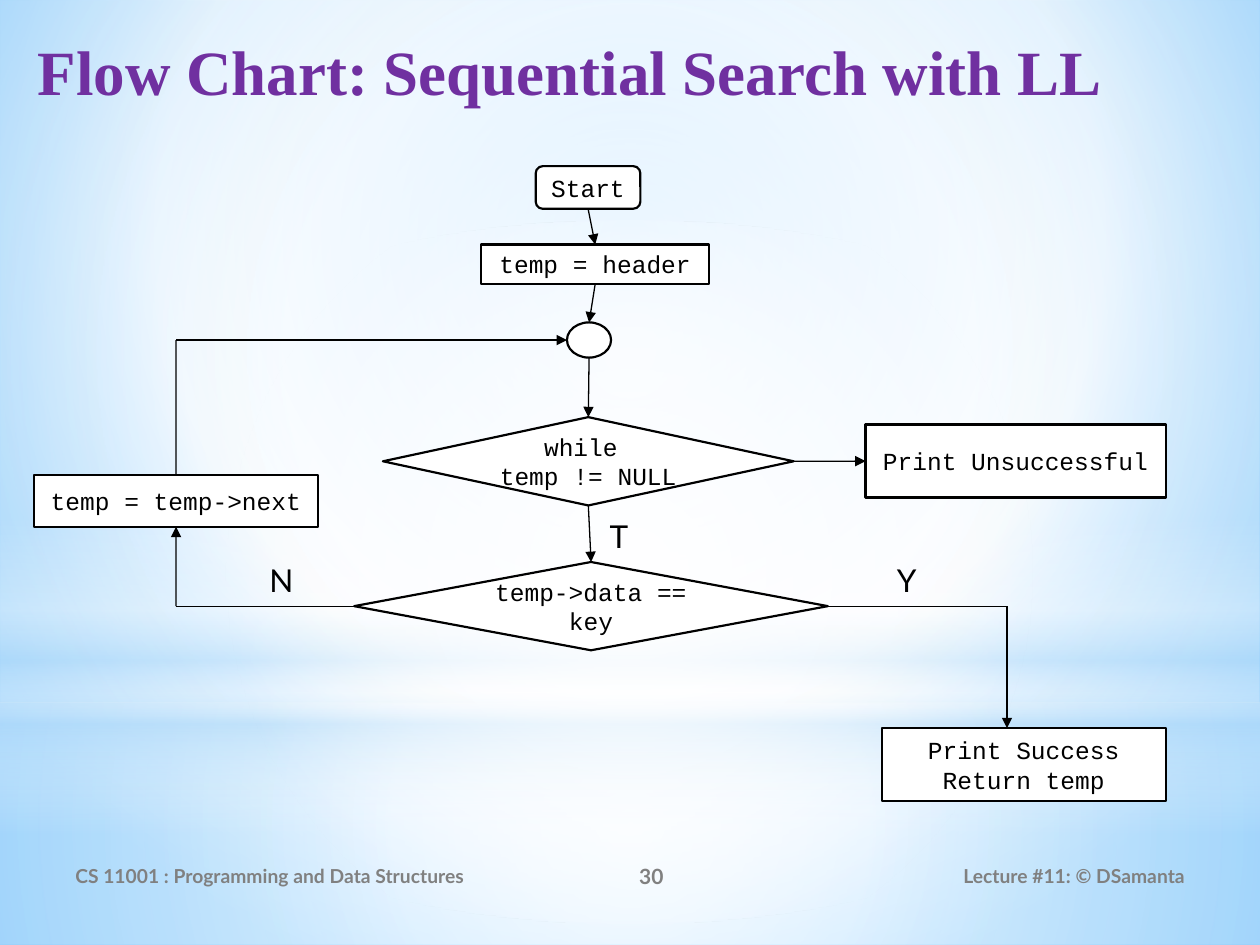
from dataclasses import dataclass
from typing import NamedTuple, Optional, Union

import lxml.etree
import pptx
import pptx.dml.color
import pptx.dml.fill
import pptx.enum.shapes
import pptx.enum.text
import pptx.oxml
import pptx.oxml.ns
import pptx.shapes.autoshape
import pptx.slide
import pptx.util

Cm = pptx.util.Cm
Pt = pptx.util.Pt
SHAPE = pptx.enum.shapes.MSO_SHAPE
ALIGN = pptx.enum.text.PP_ALIGN
ANCHOR = pptx.enum.text.MSO_ANCHOR
qn = pptx.oxml.ns.qn
TOP, LEFT, BOTTOM, RIGHT = range(4)


class Font(NamedTuple):
    name: str
    size: float
    color: str
    bold: bool = False


class Theme:
    ink = "000000"
    paper = "FFFFFF"
    sky = "B4DCFA"
    title = Font("Times New Roman", 36, "7030A0", True)
    footer = Font("Lato", 11, "808080", True)
    number = Font("Lato", 12, "808080", True)
    code = Font("Courier New", 14, ink)
    label = Font("Lato", 18, ink)
    outline = 1.25
    arrow = 0.75


class Box(NamedTuple):
    x: float
    y: float
    w: float
    h: float

    def lengths(self) -> list[pptx.util.Length]:
        return [Cm(v) for v in self]

    def side(self, side: int) -> "Point":
        dx, dy = [(0.5, 0), (0, 0.5), (0.5, 1), (1, 0.5)][side]
        return Point(self.x + dx * self.w, self.y + dy * self.h)


class Point(NamedTuple):
    x: float
    y: float


class Joint(NamedTuple):
    step: str
    side: int


class Stop(NamedTuple):
    pos: int
    color: str
    alpha: int = 100


@dataclass
class Gradient:
    stops: list[Stop]
    focus: Optional[tuple[int, int, int, int]] = (50, 50, 50, 50)


@dataclass
class Glow:
    kind: int
    box: Box
    gradient: Gradient


@dataclass
class Text:
    lines: list[str]
    box: Box
    font: Font
    align: int = ALIGN.LEFT
    anchor: int = ANCHOR.TOP


@dataclass
class Step:
    kind: int
    box: Box
    lines: list[str]


@dataclass
class Link:
    start: Union[Joint, Point]
    end: Union[Joint, Point]
    arrow: bool = True


BACKGROUND = Gradient([Stop(0, "9ED5FF"), Stop(60, Theme.paper), Stop(100, "5BB9FF")], (20, 10, 20, 60))
GLOWS = [
    Glow(SHAPE.RECTANGLE, Box(0, 14.17, 25.4, 4.88), Gradient(
        [Stop(0, Theme.paper, 91), Stop(37, Theme.paper, 76), Stop(100, Theme.sky, 79)])),
    Glow(SHAPE.RECTANGLE, Box(0, 0, 25.4, 14.17), Gradient(
        [Stop(0, Theme.paper, 89), Stop(48, Theme.paper, 62), Stop(100, Theme.sky, 79)])),
    Glow(SHAPE.RECTANGLE, Box(0, 10.46, 25.4, 6.35), Gradient(
        [Stop(0, Theme.paper, 0), Stop(29, Theme.paper, 30), Stop(45, Theme.sky, 40),
         Stop(55, Theme.paper, 26), Stop(65, Theme.sky, 60), Stop(100, Theme.paper, 0)], None)),
    Glow(SHAPE.OVAL, Box(0, 4.45, 25.4, 14.17), Gradient(
        [Stop(0, Theme.paper), Stop(56, Theme.paper, 0)])),
]
TEXTS = [
    Text(["Flow Chart: Sequential Search with LL"], Box(0.51, 0.53, 24.21, 3.18), Theme.title),
    Text(["CS 11001 : Programming and Data Structures"], Box(1.27, 17.15, 9.32, 1.02),
         Theme.footer, ALIGN.LEFT, ANCHOR.MIDDLE),
    Text(["30"], Box(10.59, 17.15, 5.08, 1.02), Theme.number, ALIGN.CENTER, ANCHOR.MIDDLE),
    Text(["Lecture #11: © DSamanta"], Box(17.15, 17.15, 6.99, 1.02),
         Theme.footer, ALIGN.RIGHT, ANCHOR.MIDDLE),
    Text(["Y"], Box(17.83, 11.18, 1.12, 1.02), Theme.label),
    Text(["N"], Box(5.18, 11.18, 1.12, 1.02), Theme.label),
    Text(["T"], Box(12.04, 10.29, 1.12, 1.02), Theme.label),
]
PROCESS, DECISION = SHAPE.FLOWCHART_PROCESS, SHAPE.FLOWCHART_DECISION
STEPS = {
    "next": Step(PROCESS, Box(0.69, 9.58, 5.72, 1.04), ["temp = temp->next"]),
    "start": Step(SHAPE.ROUNDED_RECTANGLE, Box(10.8, 3.35, 2.11, 0.86), ["Start"]),
    "while": Step(DECISION, Box(7.72, 8.41, 8.28, 1.78), ["while ", "temp != NULL"]),
    "header": Step(PROCESS, Box(9.7, 4.93, 4.6, 0.79), ["temp = header"]),
    "loop": Step(SHAPE.FLOWCHART_CONNECTOR, Box(11.43, 6.5, 0.89, 0.71), []),
    "compare": Step(DECISION, Box(7.14, 11.33, 9.55, 1.78), ["temp->data == key"]),
    "success": Step(PROCESS, Box(17.78, 14.68, 5.72, 1.47), ["Print Success", "Return temp"]),
    "failure": Step(PROCESS, Box(17.45, 8.56, 6.05, 1.47), ["Print Unsuccessful"]),
}
LOOP_IN = STEPS["loop"].box.side(LEFT)
LOOP_OUT = STEPS["loop"].box.side(BOTTOM)
NO_CORNER = Point(STEPS["next"].box.side(BOTTOM).x, STEPS["compare"].box.side(LEFT).y)
YES_CORNER = Point(20.3, NO_CORNER.y)
BACK_CORNER = Point(NO_CORNER.x, LOOP_IN.y)
LINKS = [
    Link(Joint("start", BOTTOM), Joint("header", TOP)),
    Link(Joint("header", BOTTOM), Joint("loop", TOP)),
    Link(LOOP_OUT, Joint("while", TOP)),
    Link(Joint("while", BOTTOM), Joint("compare", TOP)),
    Link(Joint("compare", LEFT), NO_CORNER, False),
    Link(NO_CORNER, Joint("next", BOTTOM)),
    Link(Joint("next", TOP), BACK_CORNER, False),
    Link(BACK_CORNER, LOOP_IN),
    Link(Joint("while", RIGHT), Joint("failure", LEFT)),
    Link(Joint("compare", RIGHT), YES_CORNER, False),
    Link(YES_CORNER, Point(YES_CORNER.x, STEPS["success"].box.y)),
]


def rgb(color: str) -> pptx.dml.color.RGBColor:
    return pptx.dml.color.RGBColor.from_string(color)


def paint_gradient(fill: pptx.dml.fill.FillFormat, gradient: Gradient) -> None:
    fill.gradient()
    grad = fill._fill._gradFill
    for child in list(grad):
        grad.remove(child)
    stops = lxml.etree.SubElement(grad, qn("a:gsLst"))
    for stop in gradient.stops:
        gs = lxml.etree.SubElement(stops, qn("a:gs"), pos=str(stop.pos * 1000))
        color = lxml.etree.SubElement(gs, qn("a:srgbClr"), val=stop.color)
        if stop.alpha < 100:
            lxml.etree.SubElement(color, qn("a:alpha"), val=str(stop.alpha * 1000))
    if gradient.focus:
        circle = lxml.etree.SubElement(grad, qn("a:path"), path="circle")
        edges = {k: str(v * 1000) for k, v in zip("ltrb", gradient.focus)}
        lxml.etree.SubElement(circle, qn("a:fillToRect"), edges)
    else:
        lxml.etree.SubElement(grad, qn("a:lin"), ang="5400000", scaled="0")


def write(sp: pptx.shapes.autoshape.Shape, lines: list[str], font: Font, align: int, anchor: int) -> None:
    tf = sp.text_frame
    tf.word_wrap = True
    tf.vertical_anchor = anchor
    for i, line in enumerate(lines):
        p = tf.add_paragraph() if i else tf.paragraphs[0]
        p.alignment = align
        r = p.add_run()
        r.text = line
        r.font.name, r.font.size, r.font.bold = font.name, Pt(font.size), font.bold
        r.font.color.rgb = rgb(font.color)


def draw_glow(s: pptx.slide.Slide, glow: Glow) -> None:
    sp = s.shapes.add_shape(glow.kind, *glow.box.lengths())
    sp.shadow.inherit = False
    sp.line.fill.background()
    paint_gradient(sp.fill, glow.gradient)


def draw_text(s: pptx.slide.Slide, text: Text) -> None:
    sp = s.shapes.add_textbox(*text.box.lengths())
    write(sp, text.lines, text.font, text.align, text.anchor)


def draw_step(s: pptx.slide.Slide, step: Step) -> pptx.shapes.autoshape.Shape:
    sp = s.shapes.add_shape(step.kind, *step.box.lengths())
    sp.shadow.inherit = False
    sp.fill.solid()
    sp.fill.fore_color.rgb = rgb(Theme.paper)
    sp.line.color.rgb = rgb(Theme.ink)
    sp.line.width = Pt(Theme.outline)
    write(sp, step.lines, Theme.code, ALIGN.CENTER, ANCHOR.MIDDLE)
    return sp


def draw_link(s: pptx.slide.Slide, link: Link, drawn: dict[str, pptx.shapes.autoshape.Shape]) -> None:
    ends = [STEPS[e.step].box.side(e.side) if isinstance(e, Joint) else e for e in (link.start, link.end)]
    line = s.shapes.add_connector(pptx.enum.shapes.MSO_CONNECTOR.STRAIGHT, *[Cm(v) for e in ends for v in e])
    for end, connect in ((link.start, line.begin_connect), (link.end, line.end_connect)):
        if isinstance(end, Joint):
            connect(drawn[end.step], end.side)
    line.line.color.rgb = rgb(Theme.ink)
    line.line.width = Pt(Theme.arrow)
    if link.arrow:
        lxml.etree.SubElement(line.line._get_or_add_ln(), qn("a:tailEnd"), type="triangle")
    lxml.etree.SubElement(line._element.spPr, qn("a:effectLst"))


def main() -> None:
    """Build the sequential search flow chart slide."""
    prs = pptx.Presentation()
    prs.slide_width, prs.slide_height = Cm(25.4), Cm(19.05)
    s = prs.slides.add_slide(prs.slide_layouts[6])
    paint_gradient(s.background.fill, BACKGROUND)
    for glow in GLOWS:
        draw_glow(s, glow)
    for text in TEXTS:
        draw_text(s, text)
    drawn = {name: draw_step(s, step) for name, step in STEPS.items()}
    for link in LINKS:
        draw_link(s, link, drawn)
    prs.save("out.pptx")


if __name__ == "__main__":
    main()
